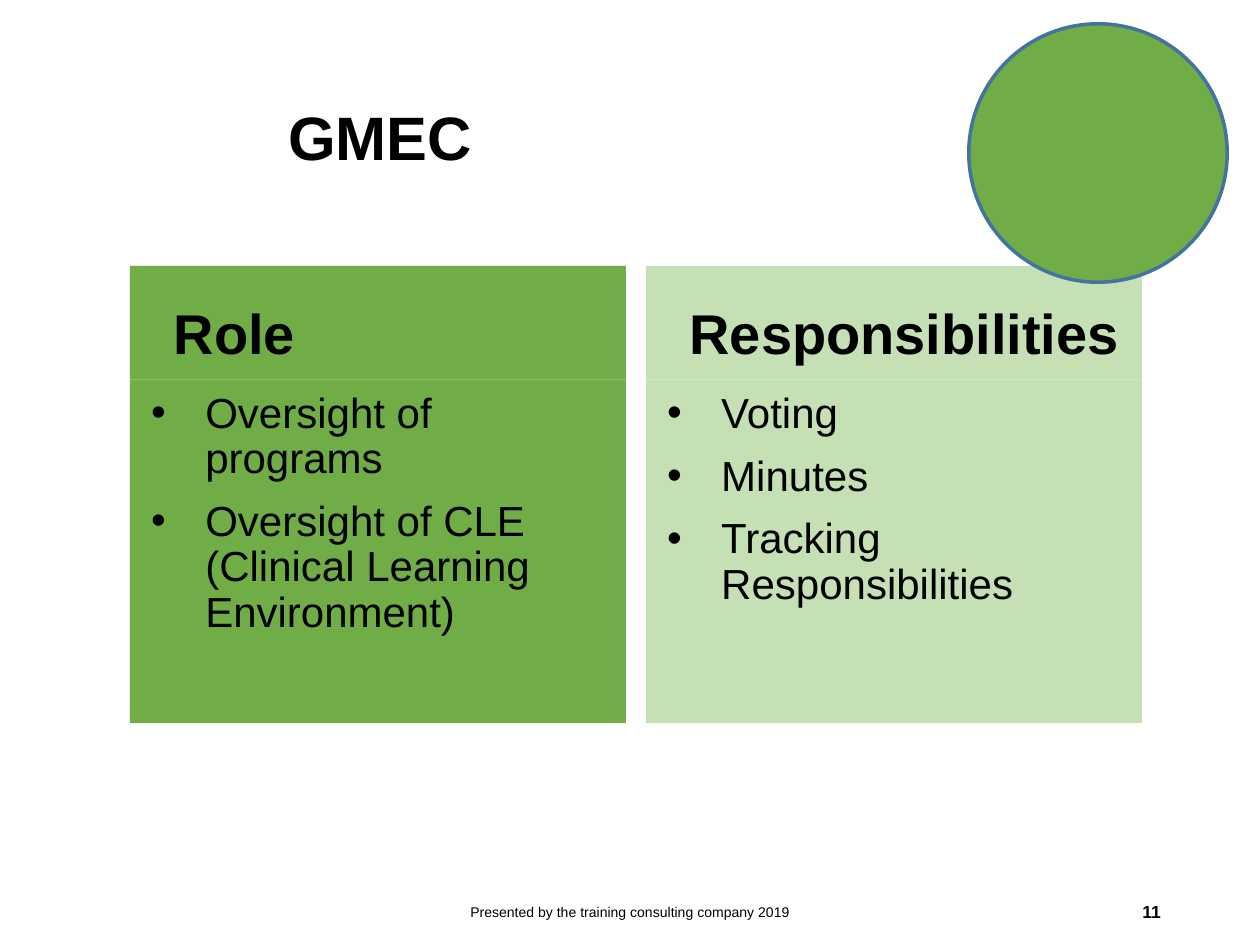
from lxml import etree
from pptx import Presentation
from pptx import util as u
from pptx.dml.color import RGBColor
from pptx.enum import shapes, text
from pptx.oxml.ns import qn

COLORS = {
    "green": "70AD47",
    "pale": "C5E0B4",
    "outline": "43739E",
    "ink": "000000",
}
FONT = "Arial"
HEADING_HEIGHT = 2.29
INSET = 0.25


def rgb(name):
    return RGBColor.from_string(COLORS[name])


def add_bullet(paragraph):
    properties = paragraph._p.get_or_add_pPr()
    color = etree.SubElement(properties, qn("a:buClr"))
    etree.SubElement(color, qn("a:srgbClr"), val=COLORS["ink"])
    etree.SubElement(properties, qn("a:buFont"), typeface=FONT)
    etree.SubElement(properties, qn("a:buChar"), char="•")


def set_indent(paragraph, left, hanging):
    properties = paragraph._p.get_or_add_pPr()
    properties.set("marL", str(u.Cm(left)))
    properties.set("indent", str(-u.Cm(hanging)))


def write(shape, lines, size, bold=False, anchor=text.MSO_ANCHOR.MIDDLE,
          align=text.PP_ALIGN.LEFT, hanging=0, bullets=False,
          spacing=1.0, inset_y=INSET):
    frame = shape.text_frame
    frame.word_wrap = True
    frame.vertical_anchor = anchor
    frame.margin_left = frame.margin_right = u.Cm(INSET)
    frame.margin_top = frame.margin_bottom = u.Cm(inset_y)
    for index, line in enumerate(lines):
        paragraph = frame.paragraphs[0] if index == 0 else frame.add_paragraph()
        if bullets:
            add_bullet(paragraph)
        if hanging:
            set_indent(paragraph, 1.27, hanging)
        paragraph.alignment = align
        paragraph.line_spacing = spacing
        if index:
            paragraph.space_before = u.Pt(10)
        run = paragraph.add_run()
        run.text = line
        run.font.name = FONT
        run.font.size = u.Pt(size)
        run.font.bold = bold
        run.font.color.rgb = rgb("ink")


def add_filled(slide, kind, box, color):
    shape = slide.shapes.add_shape(kind, *map(u.Cm, box))
    shape.shadow.inherit = False
    shape.fill.solid()
    shape.fill.fore_color.rgb = rgb(color)
    shape.line.fill.background()
    return shape


def add_title(slide, box, title):
    write(slide.shapes.add_textbox(*map(u.Cm, box)), [title], 35, bold=True,
          spacing=0.9)


def add_column(slide, box, color, heading, points):
    left, top, width, height = box
    rectangle = shapes.MSO_SHAPE.RECTANGLE
    header = add_filled(slide, rectangle, (left, top, width, HEADING_HEIGHT), color)
    write(header, [heading], 32, bold=True, anchor=text.MSO_ANCHOR.BOTTOM,
          hanging=0.64, spacing=0.9)
    body = add_filled(slide, rectangle,
                      (left, top + HEADING_HEIGHT, width, height - HEADING_HEIGHT), color)
    write(body, points, 24, anchor=text.MSO_ANCHOR.TOP, hanging=1.09,
          bullets=True, spacing=0.9)


def add_footer(slide, box, credit, number):
    left, top, width, height = box
    credit_width, number_width = 8.59, 5.72
    credit_box = (left, top, credit_width, height)
    number_box = (left + width - number_width, top, number_width, height)
    write(slide.shapes.add_textbox(*map(u.Cm, number_box)), [number], 10,
          bold=True, align=text.PP_ALIGN.RIGHT, inset_y=0.13)
    write(slide.shapes.add_textbox(*map(u.Cm, credit_box)), [credit], 8,
          align=text.PP_ALIGN.CENTER, inset_y=0.13)


def add_circle(slide, box):
    circle = add_filled(slide, shapes.MSO_SHAPE.OVAL, box, "green")
    circle.line.color.rgb = rgb("outline")
    circle.line.width = u.Pt(2)


def main():
    deck = Presentation()
    deck.slide_width, deck.slide_height = u.Cm(25.4), u.Cm(19.05)
    slide = deck.slides.add_slide(deck.slide_layouts[6])

    columns = [
        ("green", "Role", ["Oversight of programs",
                           "Oversight of CLE (Clinical Learning Environment)"]),
        ("pale", "Responsibilities", ["Voting", "Minutes",
                                      "Tracking Responsibilities"]),
    ]
    column_width, gap = 10, 0.4
    for index, (color, heading, points) in enumerate(columns):
        left = 2.62 + index * (column_width + gap)
        add_column(slide, (left, 5.36, column_width, 9.22), color, heading, points)

    add_title(slide, (5.56, 0.99, 4.27, 3.68), "GMEC")
    add_footer(slide, (8.41, 17.87, 15.24, 1.02),
               "Presented by the training consulting company 2019", "11")
    add_circle(slide, (19.53, 0.48, 5.21, 5.21))
    deck.save("out.pptx")


if __name__ == "__main__":
    main()
